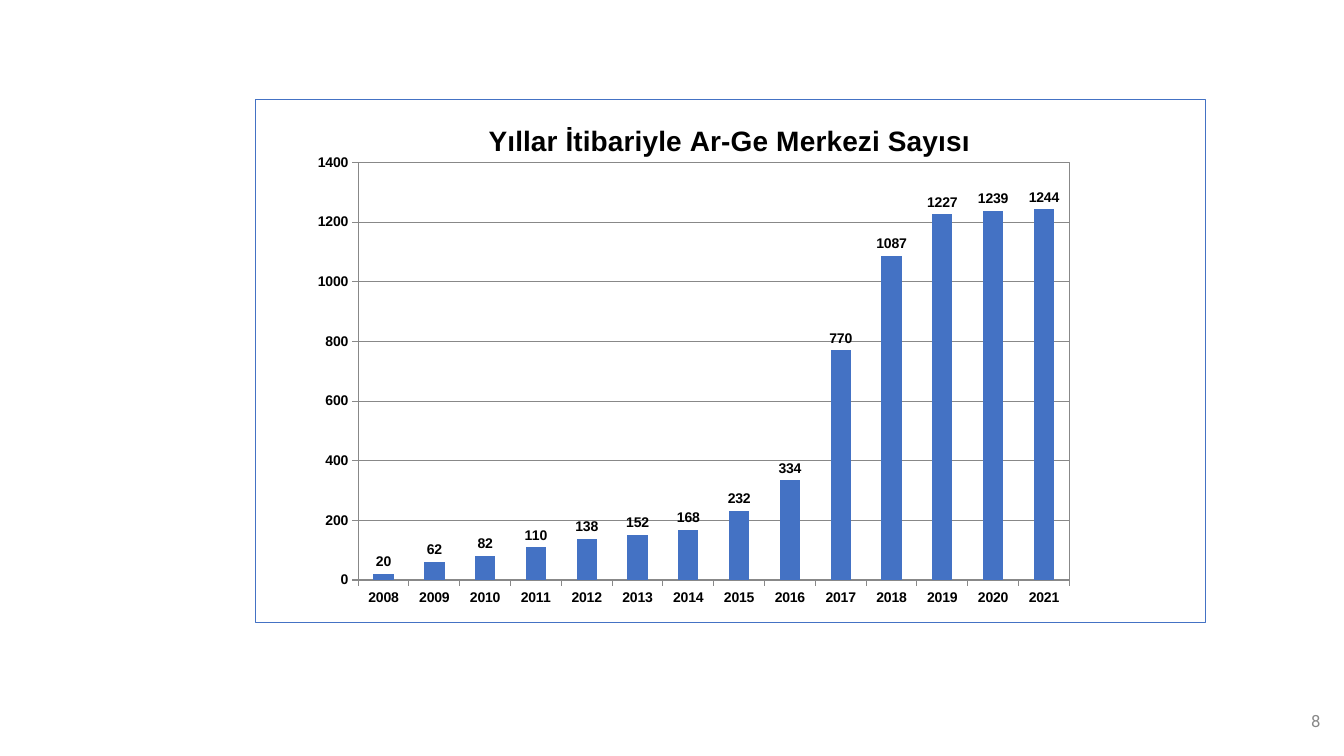
import dataclasses

import lxml.etree
import pptx
import pptx.chart.data
import pptx.dml.color
import pptx.enum.chart
import pptx.enum.text
import pptx.oxml
import pptx.oxml.ns
import pptx.util

Pt = pptx.util.Pt
RGB = pptx.dml.color.RGBColor
BLUE = RGB(0x44, 0x72, 0xC4)
GREY = RGB(0x88, 0x88, 0x88)
BLACK = RGB(0, 0, 0)
WHITE = RGB(0xFF, 0xFF, 0xFF)
NS = pptx.oxml.ns.nsdecls("c", "a")


@dataclasses.dataclass
class Box:
    left: float
    top: float
    width: float
    height: float

    def place(self) -> tuple:
        return Pt(self.left), Pt(self.top), Pt(self.width), Pt(self.height)


@dataclasses.dataclass
class Count:
    year: int
    total: int


TOTALS = (20, 62, 82, 110, 138, 152, 168, 232, 334, 770, 1087, 1227, 1239, 1244)
COUNTS = [Count(year, total) for year, total in enumerate(TOTALS, 2008)]


def style(font, size: float, bold: bool = True, color: RGB = BLACK, name: str = "Arial") -> None:
    font.size, font.bold, font.name = Pt(size), bold, name
    font.color.rgb = color


def write(slide, text: str, box: Box, *, align, **form) -> None:
    frame = slide.shapes.add_textbox(*box.place()).text_frame
    frame.word_wrap = True
    frame.vertical_anchor = pptx.enum.text.MSO_ANCHOR.MIDDLE
    line = frame.paragraphs[0]
    line.alignment = align
    run = line.add_run()
    run.text = text
    style(run.font, **form)


def frame_xml(fill: str, color: RGB, width: float) -> lxml.etree._Element:
    return pptx.oxml.parse_xml(
        f'<c:spPr {NS}>{fill}<a:ln w="{Pt(width)}"><a:solidFill>'
        f'<a:srgbClr val="{color}"/></a:solidFill></a:ln></c:spPr>')


def layout_xml(target: str, **spots: float) -> lxml.etree._Element:
    modes = "".join(f'<c:{key}Mode val="edge"/>' for key in "xy")
    sizes = "".join(f'<c:{key} val="{spot}"/>' for key, spot in spots.items())
    return pptx.oxml.parse_xml(
        f"<c:layout {NS}><c:manualLayout>{target}{modes}{sizes}</c:manualLayout></c:layout>")


def set_layout(parent, after, layout) -> None:
    for old in parent.findall(pptx.oxml.ns.qn("c:layout")):
        parent.remove(old)
    if after is None:
        parent.insert(0, layout)
    else:
        after.addnext(layout)


def add_bars(slide, box: Box) -> None:
    data = pptx.chart.data.CategoryChartData()
    data.categories = [str(item.year) for item in COUNTS]
    data.add_series("Series 1", [item.total for item in COUNTS])
    kind = pptx.enum.chart.XL_CHART_TYPE.COLUMN_CLUSTERED
    chart = slide.shapes.add_chart(kind, *box.place(), data).chart
    style(chart.font, 10, bold=False)
    chart.has_legend = False

    # Title
    chart.has_title = True
    title = chart.chart_title
    title.include_in_layout = False
    title.text_frame.text = "Yıllar İtibariyle Ar-Ge Merkezi Sayısı"
    style(title.text_frame.paragraphs[0].runs[0].font, 20)

    # Axes
    for axis in (chart.category_axis, chart.value_axis):
        axis.major_tick_mark = pptx.enum.chart.XL_TICK_MARK.OUTSIDE
        axis.minor_tick_mark = pptx.enum.chart.XL_TICK_MARK.NONE
        axis.format.line.color.rgb = GREY
        axis.format.line.width = Pt(0.75)
        style(axis.tick_labels.font, 10)
    scale = chart.value_axis
    scale.minimum_scale, scale.maximum_scale, scale.major_unit = 0, 1400, 200
    scale.has_major_gridlines = True
    grid = scale.major_gridlines.format.line
    grid.color.rgb, grid.width = GREY, Pt(0.75)

    # Columns and their values
    plot = chart.plots[0]
    plot.gap_width, plot.vary_by_categories = 150, False
    bars = plot.series[0]
    bars.format.fill.solid()
    bars.format.fill.fore_color.rgb = BLUE
    labels = bars.data_labels
    labels.show_value = True
    labels.position = pptx.enum.chart.XL_LABEL_POSITION.OUTSIDE_END
    style(labels.font, 10)

    # Placement and borders
    root = chart.element.find(pptx.oxml.ns.qn("c:chart"))
    area = root.find(pptx.oxml.ns.qn("c:plotArea"))
    head = root.find(pptx.oxml.ns.qn("c:title"))
    inner = '<c:layoutTarget val="inner"/>'
    set_layout(area, None, layout_xml(inner, x=0.108, y=0.121, w=0.749, h=0.798))
    set_layout(head, head.find(pptx.oxml.ns.qn("c:tx")), layout_xml("", x=0.24, y=0.035))
    area.append(frame_xml("<a:noFill/>", GREY, 0.75))
    white = f'<a:solidFill><a:srgbClr val="{WHITE}"/></a:solidFill>'
    root.addnext(frame_xml(white, BLUE, 0.75))


def main() -> None:
    deck = pptx.Presentation()
    deck.slide_width, deck.slide_height = Pt(960), Pt(540)
    slide = deck.slides.add_slide(deck.slide_layouts[6])
    add_bars(slide, Box(182.2, 70.6, 679, 374.4))
    # Page number
    write(slide, "8", Box(734.4, 500.4, 216, 28.8), align=pptx.enum.text.PP_ALIGN.RIGHT,
          size=12, bold=False, color=GREY, name="Roboto")
    deck.save("out.pptx")


if __name__ == "__main__":
    main()
